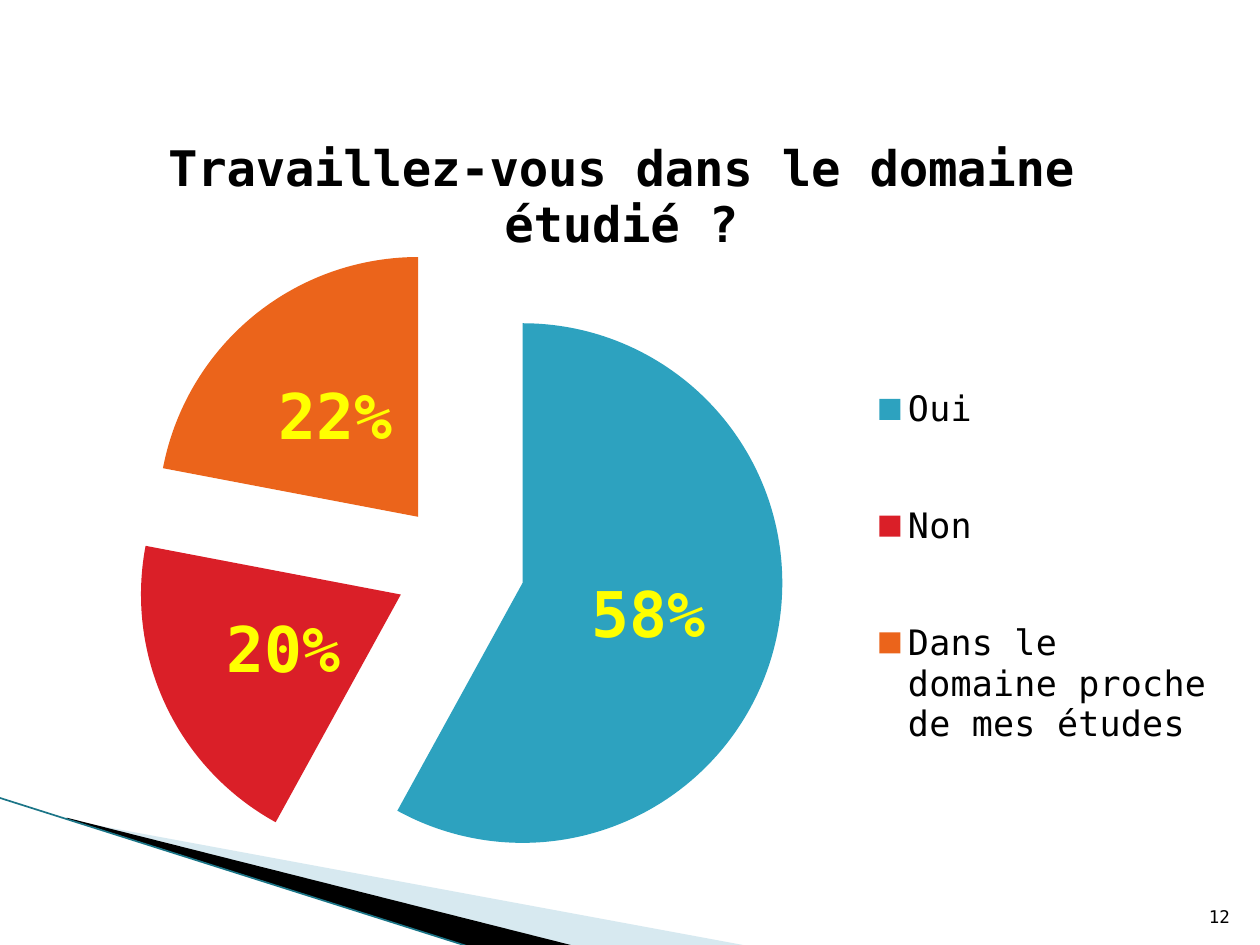
from lxml import etree
from pptx import Presentation
from pptx import util as u
from pptx.chart.data import CategoryChartData
from pptx.dml.color import RGBColor
from pptx.enum import chart as ch, shapes, text
from pptx.oxml import parse_xml
from pptx.oxml.ns import nsdecls, qn

FONT = "DejaVu Sans Mono"


def rgb(value):
    return RGBColor.from_string(value)


def place(element, inner=False, **shares):
    for old in element.findall(qn("c:layout")):
        element.remove(old)
    parts = [("layoutTarget", "inner")] if inner else []
    parts += [("xMode", "edge"), ("yMode", "edge")]
    parts += [(k, v / 100) for k, v in shares.items()]
    body = "".join(f'<c:{k} val="{v}"/>' for k, v in parts)
    layout = parse_xml(f'<c:layout {nsdecls("c")}><c:manualLayout>{body}</c:manualLayout></c:layout>')
    before = [e for e in element if e.tag in (qn("c:tx"), qn("c:legendPos"))]
    element.insert(element.index(before[-1]) + 1 if before else 0, layout)


prs = Presentation()
prs.slide_width, prs.slide_height = u.Inches(10), u.Inches(7.5)
W, H = prs.slide_width / 100, prs.slide_height / 100
s = prs.slides.add_slide(prs.slide_layouts[6])

wedges = [
    ("A0CBDC", 42, [(5.5, 86.8), (59.5, 100.13), (45.6, 100.13), (5.5, 86.67)]),
    ("000000", 100, [(5.3, 86.53), (45.7, 100.13), (37.2, 100.13), (5.4, 86.67)]),
]
for color, opacity, points in wedges:
    points = [(round(x * W), round(y * H)) for x, y in points]
    fb = s.shapes.build_freeform(*points[0])
    fb.add_line_segments(points[1:])
    sp = fb.convert_to_shape()
    sp.shadow.inherit = False
    sp.fill.solid()
    sp.fill.fore_color.rgb = rgb(color)
    sp.line.fill.background()
    if opacity < 100:
        clr = sp._element.spPr.find(".//" + qn("a:srgbClr"))
        etree.SubElement(clr, qn("a:alpha")).set("val", str(opacity * 1000))

ends = [round(v) for v in (-0.1 * W, 84.4 * H, 37.1 * W, 100.13 * H)]
edge = s.shapes.add_connector(shapes.MSO_CONNECTOR.STRAIGHT, *ends)
edge.line.color.rgb = rgb("1B7587")
edge.line.width = u.Pt(0.95)
etree.SubElement(edge._element.spPr, qn("a:effectLst"))

data = CategoryChartData(number_format="0%")
data.categories = ["Oui", "Non", "Dans le domaine proche de mes études"]
data.add_series("Series 1", [0.58, 0.2, 0.22])
box = [round(v) for v in (3.5 * W, 8 * H, 94.5 * W, 88.13 * H)]
chart = s.shapes.add_chart(ch.XL_CHART_TYPE.PIE, *box, data).chart
chart.font.name, chart.font.size = FONT, u.Pt(10)
chart.font.color.rgb = rgb("000000")

chart.has_title = True
tf = chart.chart_title.text_frame
tf.text = "Travaillez-vous dans le domaine"
tf.add_paragraph().text = "étudié ?"
for p in tf.paragraphs:
    p.alignment = text.PP_ALIGN.CENTER
    p.font.name, p.font.size, p.font.bold = FONT, u.Pt(28), True
    p.font.color.rgb = rgb("000000")
chart.chart_title.include_in_layout = False

chart.has_legend = True
legend = chart.legend
legend.position = ch.XL_LEGEND_POSITION.RIGHT
legend.include_in_layout = False
legend.font.name, legend.font.size = FONT, u.Pt(20)
legend.font.color.rgb = rgb("000000")

plot = chart.plots[0]
plot.vary_by_categories = True
series = plot.series[0]
for i, color in enumerate(["2DA2BF", "DA1F28", "EB641B"]):
    fill = series.points[i].format.fill
    fill.solid()
    fill.fore_color.rgb = rgb(color)
explosion = parse_xml(f'<c:explosion {nsdecls("c")} val="25"/>')
series._element.find(qn("c:dPt")).addprevious(explosion)

labels = series.data_labels
labels.show_value = True
labels.show_percentage = False
labels.number_format, labels.number_format_is_linked = "0%", False
labels.position = ch.XL_LABEL_POSITION.CENTER
labels.font.name, labels.font.size, labels.font.bold = FONT, u.Pt(36), True
labels.font.color.rgb = rgb("FFFF00")

place(chart.chart_title._element, x=10.1, y=7.2)
place(legend._element, x=69.4, y=28.5, w=29, h=61)
place(plot._element.getparent(), inner=True, x=7.4, y=20, w=55, h=78)

box = [round(v) for v in (94.6 * W, 93.47 * H, 4 * W, 5.33 * H)]
tf = s.shapes.add_textbox(*box).text_frame
tf.word_wrap = True
tf.vertical_anchor = text.MSO_ANCHOR.BOTTOM
p = tf.paragraphs[0]
p.text = "12"
p.alignment = text.PP_ALIGN.RIGHT
p.font.name, p.font.size = FONT, u.Pt(10)
p.font.color.rgb = rgb("000000")

prs.save("out.pptx")
